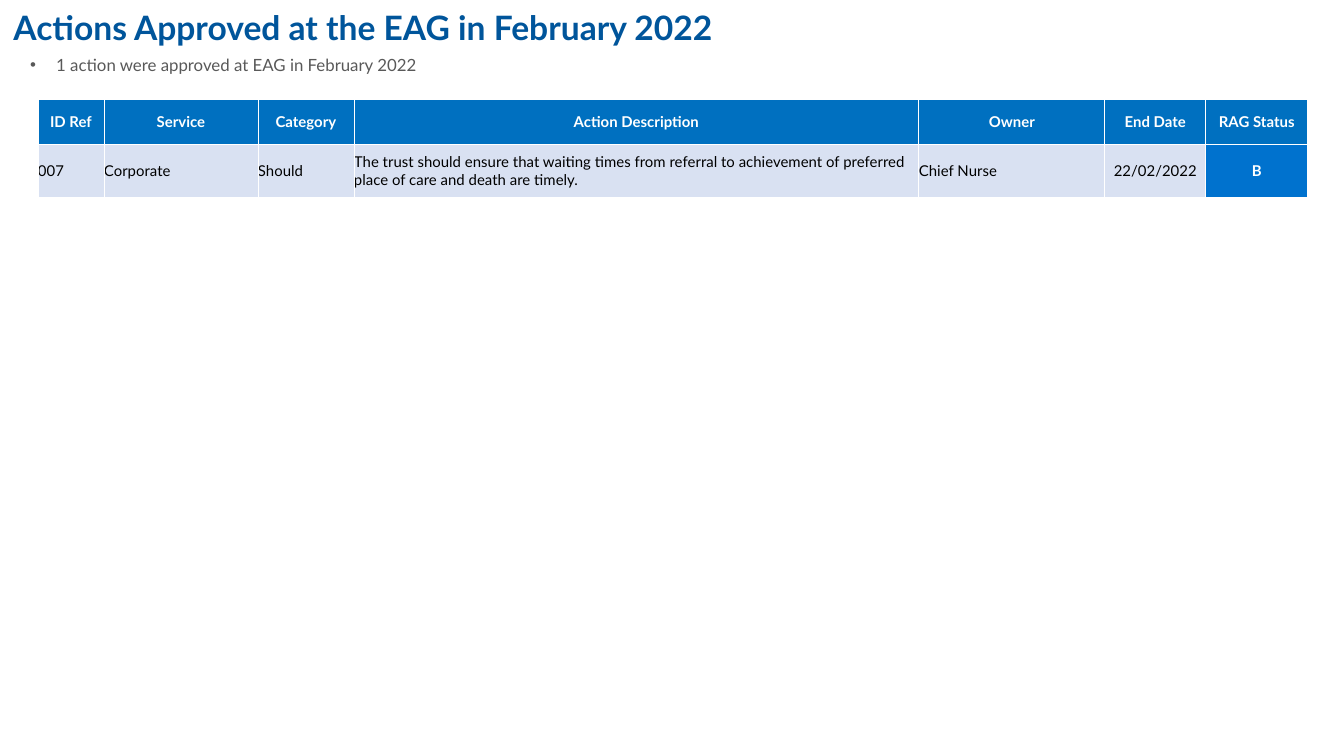
from dataclasses import dataclass

from lxml import etree
from pptx import Presentation
from pptx import util as u
from pptx.dml.color import RGBColor
from pptx.enum import text
from pptx.oxml.ns import qn

PX = 914400 / 134.4
FONT = "Lato"
COLORS = {
    "title": "00559B",
    "body": "595959",
    "header": "0070C0",
    "row": "D9E1F2",
    "rag_blue": "0072CE",
    "white": "FFFFFF",
    "black": "000000",
}
LEFT, CENTER, JUSTIFY = (
    text.PP_ALIGN.LEFT, text.PP_ALIGN.CENTER, text.PP_ALIGN.JUSTIFY)


@dataclass
class Column:
    header: str
    width: int
    value: str
    align: text.PP_ALIGN = LEFT
    fill: str = "row"
    color: str = "black"
    bold: bool = False


COLUMNS = [
    Column("ID Ref", 66, "007"),
    Column("Service", 154, "Corporate"),
    Column("Category", 96, "Should"),
    Column("Action Description", 565,
           "The trust should ensure that waiting times from referral to "
           "achievement of preferred place of care and death are timely."),
    Column("Owner", 186, "Chief Nurse"),
    Column("End Date", 101, "22/02/2022", CENTER),
    Column("RAG Status", 102, "B", CENTER, "rag_blue", "white", True),
]
ROW_HEIGHTS = [45, 53]


def px(n: int) -> u.Emu:
    return u.Emu(round(n * PX))


def rgb(name: str) -> RGBColor:
    return RGBColor.from_string(COLORS[name])


def write(tf, content: str, *, size: int, color: str, bold: bool = False,
          align=LEFT, bullet_indent: int = 0) -> None:
    tf.word_wrap = True
    p = tf.paragraphs[0]
    p.alignment = align
    if bullet_indent:
        pPr = p._p.get_or_add_pPr()
        pPr.set("marL", str(px(bullet_indent)))
        pPr.set("indent", str(-px(bullet_indent)))
        etree.SubElement(pPr, qn("a:buFont"), typeface="Arial")
        etree.SubElement(pPr, qn("a:buChar"), char="•")
    r = p.add_run()
    r.text = content
    r.font.name = FONT
    r.font.size = u.Pt(size)
    r.font.bold = bold
    r.font.color.rgb = rgb(color)


def add_borders(cell) -> None:
    tcPr = cell._tc.get_or_add_tcPr()
    for side in ("lnL", "lnR", "lnT", "lnB"):
        ln = etree.SubElement(tcPr, qn(f"a:{side}"), w=str(u.Pt(0.5)))
        fill = etree.SubElement(ln, qn("a:solidFill"))
        etree.SubElement(fill, qn("a:srgbClr"), val=COLORS["white"])


def fill_cell(cell, content: str, *, fill: str, color: str, bold: bool,
              align: text.PP_ALIGN) -> None:
    cell.margin_left = cell.margin_right = 0
    cell.margin_top = cell.margin_bottom = 0
    cell.vertical_anchor = text.MSO_ANCHOR.MIDDLE
    add_borders(cell)
    cell.fill.solid()
    cell.fill.fore_color.rgb = rgb(fill)
    write(cell.text_frame, content, size=8, color=color, bold=bold, align=align)


def add_title(s) -> None:
    sp = s.shapes.title
    sp.left, sp.top, sp.width, sp.height = px(0), px(0), px(1344), px(62)
    tf = sp.text_frame
    tf.auto_size = text.MSO_AUTO_SIZE.NONE
    tf.vertical_anchor = text.MSO_ANCHOR.TOP
    write(tf, "Actions Approved at the EAG in February 2022",
          size=18, color="title", bold=True)


def add_summary(s) -> None:
    sp = s.shapes.add_textbox(px(17), px(48), px(1290), px(34))
    sp.text_frame.auto_size = text.MSO_AUTO_SIZE.SHAPE_TO_FIT_TEXT
    write(sp.text_frame, "1 action were approved at EAG in February 2022",
          size=9, color="body", align=JUSTIFY, bullet_indent=26)


def add_actions_table(s) -> None:
    width = sum(c.width for c in COLUMNS)
    table = s.shapes.add_table(len(ROW_HEIGHTS), len(COLUMNS), px(38), px(99),
                               px(width), px(sum(ROW_HEIGHTS))).table
    for row, height in zip(table.rows, ROW_HEIGHTS):
        row.height = px(height)
    for i, c in enumerate(COLUMNS):
        table.columns[i].width = px(c.width)
        fill_cell(table.cell(0, i), c.header, fill="header", color="white",
                  bold=True, align=CENTER)
        fill_cell(table.cell(1, i), c.value, fill=c.fill, color=c.color,
                  bold=c.bold, align=c.align)


def main() -> None:
    prs = Presentation()
    prs.slide_width, prs.slide_height = px(1344), px(756)
    s = prs.slides.add_slide(prs.slide_layouts[5])
    add_title(s)
    add_summary(s)
    add_actions_table(s)
    prs.save("out.pptx")


if __name__ == "__main__":
    main()
